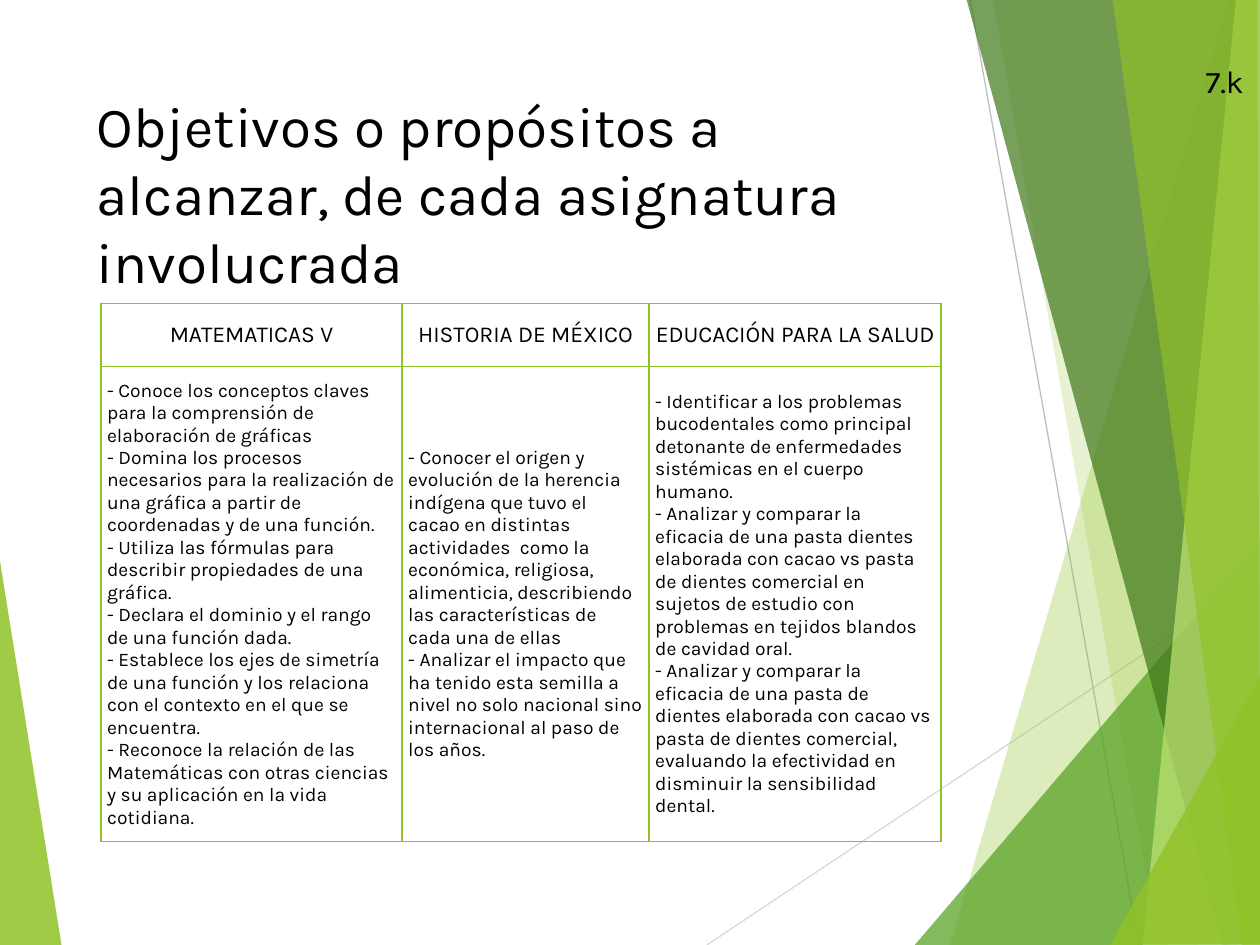
from dataclasses import dataclass

from lxml import etree
from pptx import Presentation
from pptx.dml.color import RGBColor
from pptx.enum.shapes import MSO_CONNECTOR
from pptx.enum.text import MSO_ANCHOR, PP_ALIGN
from pptx.oxml import parse_xml
from pptx.oxml.ns import nsdecls, qn
from pptx.util import Inches, Pt

STRAIGHT = MSO_CONNECTOR.STRAIGHT
MIDDLE = MSO_ANCHOR.MIDDLE
LEFT, CENTER = PP_ALIGN.LEFT, PP_ALIGN.CENTER
UNITS_PER_INCH = 100


@dataclass(frozen=True)
class Theme:
    """Colours, font and type sizes of the slide."""
    font: str = "Karla"
    text: str = "000000"
    lime: str = "90C226"
    green: str = "54A021"
    forest: str = "3F7819"
    pale: str = "C0E474"
    light_line: str = "D9D9D9"
    dark_line: str = "BFBFBF"
    title_size: float = 32.4
    label_size: float = 18
    header_size: float = 13
    body_size: float = 11


THEME = Theme()

RAYS = [
    ((5.61, 7.5), (10.01, 4.57), THEME.light_line),
    ((7.7, 0), (9.04, 7.5), THEME.dark_line),
]
LEFT_FACET = ([(-0.01, 4.39), (0.49, 7.51), (-0.01, 7.5)], THEME.lime, 85)
RIGHT_FACETS = [
    ([(9.75, 0), (7.54, 7.5), (10.02, 7.51), (10.01, 0.01)], THEME.lime, 30),
    ([(7.88, -0.01), (9.19, 7.5), (10.01, 7.5), (10.01, -0.01)], THEME.lime, 20),
    ([(7.26, 7.5), (10, 4.29), (10.01, 7.5)], THEME.green, 72),
    ([(7.67, -0.01), (9.7, 7.5), (10.01, 7.49), (10.01, -0.01)], THEME.forest, 70),
    ([(9.81, -0.01), (9.07, 7.5), (10.01, 7.5), (10, -0.01)], THEME.pale, 70),
    ([(8.83, -0.01), (9.86, 7.5), (10, 7.5), (9.98, -0.01)], THEME.lime, 65),
    ([(8.81, 7.5), (10.01, 5.35), (10.01, 7.49)], THEME.lime, 80),
]

SUBJECTS = [
    ("MATEMATICAS V", 2.39,
     "- Conoce los conceptos claves para la comprensión de elaboración de gráficas\v"
     "- Domina los procesos necesarios para la realización de una gráfica a partir de "
     "coordenadas y de una función.\v"
     "- Utiliza las fórmulas para describir propiedades de una gráfica.\v"
     "- Declara el dominio y el rango de una función dada.\v"
     "- Establece los ejes de simetría de una función y los relaciona con el contexto "
     "en el que se encuentra.\v"
     "- Reconoce la relación de las Matemáticas con otras ciencias y su aplicación en "
     "la vida cotidiana."),
    ("HISTORIA DE MÉXICO", 1.96,
     "- Conocer el origen y evolución de la herencia indígena que tuvo el cacao en "
     "distintas actividades  como la económica, religiosa, alimenticia, describiendo "
     "las características de cada una de ellas\n"
     "- Analizar el impacto que ha tenido esta semilla a nivel no solo nacional sino "
     "internacional al paso de los años."),
    ("EDUCACIÓN PARA LA SALUD", 2.32,
     "- Identificar a los problemas bucodentales como principal detonante de "
     "enfermedades sistémicas en el cuerpo humano.\n"
     "- Analizar y comparar la eficacia de una pasta dientes elaborada con cacao vs "
     "pasta de dientes comercial en sujetos de estudio con problemas en tejidos blandos "
     "de cavidad oral.\n"
     "- Analizar y comparar la eficacia de una pasta de dientes elaborada con cacao vs "
     "pasta de dientes comercial, evaluando la efectividad en disminuir la sensibilidad "
     "dental."),
]
ROW_HEIGHTS = (0.5, 3.74)


def write_text(text_frame, text, size, alignment=LEFT):
    """Fill a text frame and style all its paragraphs alike."""
    text_frame.text = text
    for paragraph in text_frame.paragraphs:
        paragraph.alignment = alignment
        paragraph.font.name = THEME.font
        paragraph.font.size = Pt(size)
        paragraph.font.color.rgb = RGBColor.from_string(THEME.text)


def add_facet(slide, points, color, opacity):
    """Draw one translucent polygon."""
    start, *others = [(x * UNITS_PER_INCH, y * UNITS_PER_INCH) for x, y in points]
    builder = slide.shapes.build_freeform(*start, scale=Inches(1) / UNITS_PER_INCH)
    builder.add_line_segments(others, close=True)
    shape = builder.convert_to_shape()
    shape.shadow.inherit = False
    shape.line.fill.background()
    shape.fill.solid()
    shape.fill.fore_color.rgb = RGBColor.from_string(color)
    color_element = shape.fill._xPr.find(".//" + qn("a:srgbClr"))
    etree.SubElement(color_element, qn("a:alpha"), val=str(opacity * 1000))


def add_ray(slide, start, end, color):
    """Draw one thin line without shadow."""
    connector = slide.shapes.add_connector(STRAIGHT, *map(Inches, start + end))
    connector.line.color.rgb = RGBColor.from_string(color)
    connector.line.width = Pt(0.75)
    etree.SubElement(connector._element.spPr, qn("a:effectLst"))


def add_backdrop(slide):
    """Place the facets and rays at both edges of the slide."""
    add_facet(slide, *LEFT_FACET)
    for ray in RAYS:
        add_ray(slide, *ray)
    for facet in RIGHT_FACETS:
        add_facet(slide, *facet)


def add_text(slide, box, text, size, wrap=True):
    """Place a text box in the given box."""
    text_frame = slide.shapes.add_textbox(*map(Inches, box)).text_frame
    text_frame.word_wrap = wrap
    write_text(text_frame, text, size)


def add_borders(cell):
    """Outline a cell on all four sides."""
    properties = cell._tc.get_or_add_tcPr()
    for index, side in enumerate(("lnL", "lnR", "lnT", "lnB")):
        properties.insert(index, parse_xml(
            f'<a:{side} {nsdecls("a")} w="{Pt(1)}"><a:solidFill>'
            f'<a:srgbClr val="{THEME.lime}"/></a:solidFill></a:{side}>'))


def fill_cell(cell, text, size, alignment):
    """Write and style one table cell."""
    cell.fill.background()
    cell.vertical_anchor = MIDDLE
    cell.margin_left = cell.margin_right = Inches(0.05)
    cell.margin_top = cell.margin_bottom = Inches(0.05)
    write_text(cell.text_frame, text, size, alignment)
    add_borders(cell)


def add_subject_table(slide, box):
    """Place the table with one column of objectives per subject."""
    frame = slide.shapes.add_table(len(ROW_HEIGHTS), len(SUBJECTS), *map(Inches, box))
    table = frame.table
    table.first_row = table.horz_banding = False
    for row, height in zip(table.rows, ROW_HEIGHTS):
        row.height = Inches(height)
    for index, (subject, width, objectives) in enumerate(SUBJECTS):
        table.columns[index].width = Inches(width)
        fill_cell(table.cell(0, index), subject, THEME.header_size, CENTER)
        fill_cell(table.cell(1, index), objectives, THEME.body_size, LEFT)


def main():
    """Build and save the presentation."""
    presentation = Presentation()
    presentation.slide_width, presentation.slide_height = Inches(10), Inches(7.5)
    slide = presentation.slides.add_slide(presentation.slide_layouts[6])
    add_backdrop(slide)
    add_text(slide, (0.67, 0.67, 6.94, 1.44),
             "Objetivos o propósitos a alcanzar, de cada asignatura involucrada",
             THEME.title_size)
    add_text(slide, (9.47, 0.44, 0.56, 0.4), "7.k", THEME.label_size, wrap=False)
    add_subject_table(slide, (0.8, 2.41, 6.67, sum(ROW_HEIGHTS)))
    presentation.save("out.pptx")


if __name__ == "__main__":
    main()
